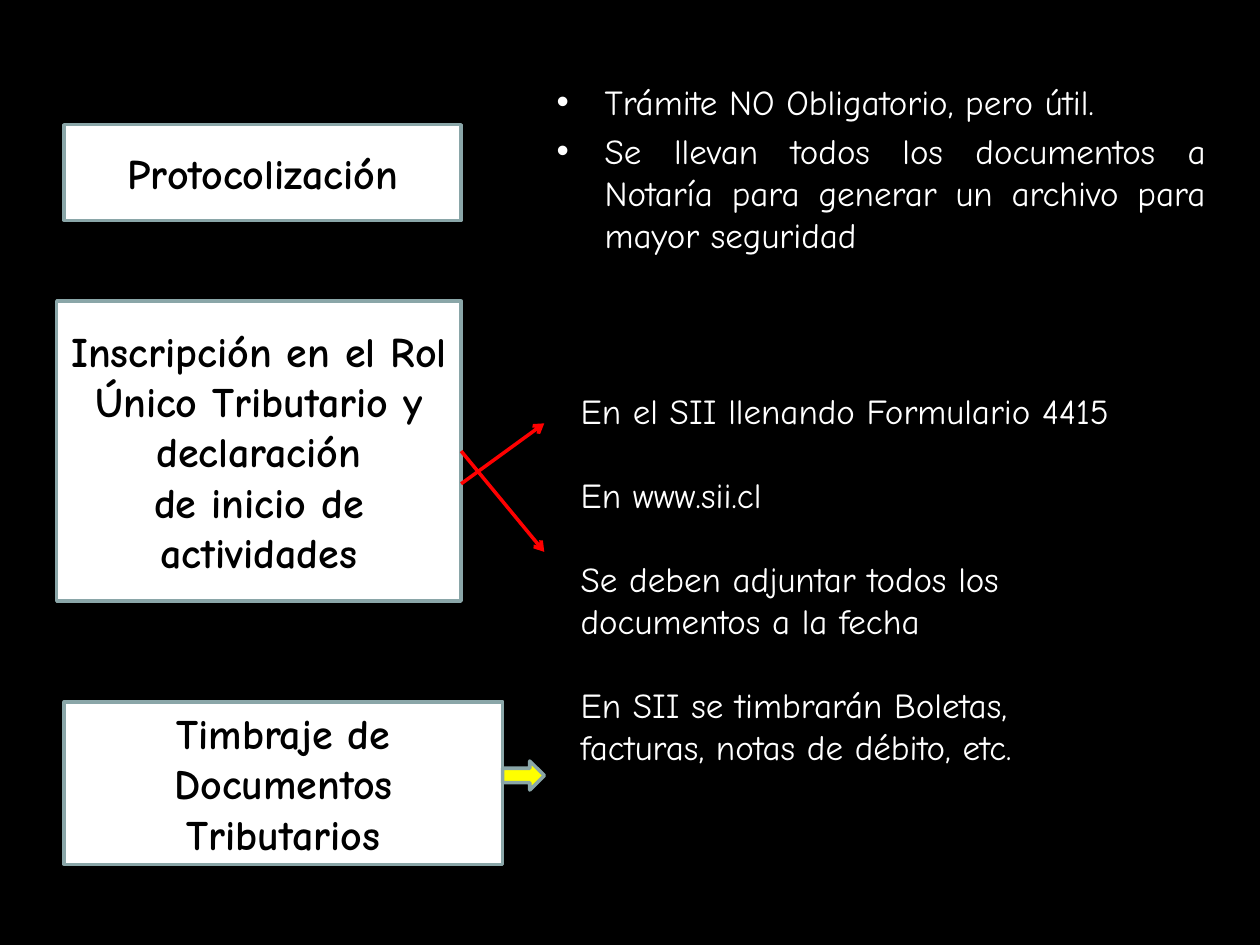
from pptx import Presentation
from pptx.dml.color import RGBColor
from pptx.enum.shapes import MSO_CONNECTOR, MSO_SHAPE
from pptx.enum.text import MSO_ANCHOR, MSO_AUTO_SIZE, PP_ALIGN
from pptx.oxml.ns import qn
from pptx.util import Inches, Pt
from lxml.etree import SubElement

BLACK = RGBColor(0x00, 0x00, 0x00)
WHITE = RGBColor(0xFF, 0xFF, 0xFF)
GREY = RGBColor(0x8A, 0xA6, 0xA8)
RED = RGBColor(0xFF, 0x00, 0x00)
YELLOW = RGBColor(0xFF, 0xFF, 0x00)
FONT = "Comic Neue"
WIDTH, HEIGHT = Inches(10), Inches(7.5)


def x(percent):
    return round(WIDTH * percent / 100)


def y(percent):
    return round(HEIGHT * percent / 100)


def place(left, top, width, height):
    return x(left), y(top), x(width), y(height)


def add_bullet(p):
    pPr = p._p.get_or_add_pPr()
    pPr.set("marL", str(Inches(0.38)))
    pPr.set("indent", str(-Inches(0.38)))
    SubElement(pPr, qn("a:buFont"), typeface="Arial")
    SubElement(pPr, qn("a:buChar"), char="•")


def write(tf, lines, size, color, align, gap=0, bold=False, bullets=False):
    tf.word_wrap = True
    tf.text = "\n".join(lines)
    for i, p in enumerate(tf.paragraphs):
        p.alignment = align
        p.space_before = Pt(gap if i else 0)
        if bullets:
            add_bullet(p)
        for r in p.runs:
            r.font.name = FONT
            r.font.size = Pt(size)
            r.font.bold = bold
            r.font.color.rgb = color


def add_outlined(s, kind, area, fill):
    sp = s.shapes.add_shape(kind, *place(*area))
    sp.shadow.inherit = False
    sp.fill.solid()
    sp.fill.fore_color.rgb = fill
    sp.line.color.rgb = GREY
    sp.line.width = Pt(2)
    return sp


def add_step(s, area, *lines):
    sp = add_outlined(s, MSO_SHAPE.RECTANGLE, area, WHITE)
    sp.text_frame.vertical_anchor = MSO_ANCHOR.MIDDLE
    write(sp.text_frame, lines, 24, BLACK, PP_ALIGN.CENTER, bold=True)
    return sp


def add_notes_text(s, area, lines, align, gap, bullets=False):
    tf = s.shapes.add_textbox(*place(*area)).text_frame
    write(tf, lines, 20, WHITE, align, gap, bullets=bullets)
    return tf


def add_arrow(s, start, end):
    line = s.shapes.add_connector(
        MSO_CONNECTOR.STRAIGHT, x(start[0]), y(start[1]), x(end[0]), y(end[1]))
    line.line.color.rgb = RED
    line.line.width = Pt(2)
    SubElement(line.line._get_or_add_ln(), qn("a:tailEnd"), type="arrow")
    SubElement(line._element.spPr, qn("a:effectLst"))
    return line


def main():
    prs = Presentation()
    prs.slide_width, prs.slide_height = WIDTH, HEIGHT
    s = prs.slides.add_slide(prs.slide_layouts[6])
    s.background.fill.solid()
    s.background.fill.fore_color.rgb = BLACK

    add_notes_text(s, (43.2, 7.87, 53.5, 25.33), [
        "Trámite NO Obligatorio, pero útil.",
        "Se llevan todos los documentos a Notaría para generar un archivo "
        "para mayor seguridad",
    ], PP_ALIGN.JUSTIFY, gap=4, bullets=True)
    add_step(s, (5.1, 13.2, 31.5, 10.13), "Protocolización")
    registration = add_step(
        s, (4.5, 31.87, 32.1, 31.73),
        "Inscripción en el Rol Único Tributario y declaración",
        "de inicio de actividades")
    tf = add_notes_text(s, (45.1, 40.53, 44.9, 46.27), [
        "En el SII llenando Formulario 4415",
        "En www.sii.cl",
        "Se deben adjuntar todos los documentos a la fecha",
        "En SII se timbrarán Boletas, facturas, notas de débito, etc.",
    ], PP_ALIGN.LEFT, gap=24)
    tf.auto_size = MSO_AUTO_SIZE.SHAPE_TO_FIT_TEXT

    add_arrow(s, (36.6, 51.2), (43.2, 44.8))
    add_arrow(s, (36.6, 47.73), (43.2, 58.4)).begin_connect(registration, 3)
    add_step(s, (5.1, 74.27, 34.8, 17.2), "Timbraje de Documentos Tributarios")
    add_outlined(s, MSO_SHAPE.RIGHT_ARROW, (39.9, 80.53, 3.3, 3.07), YELLOW)
    prs.save("out.pptx")


if __name__ == "__main__":
    main()
